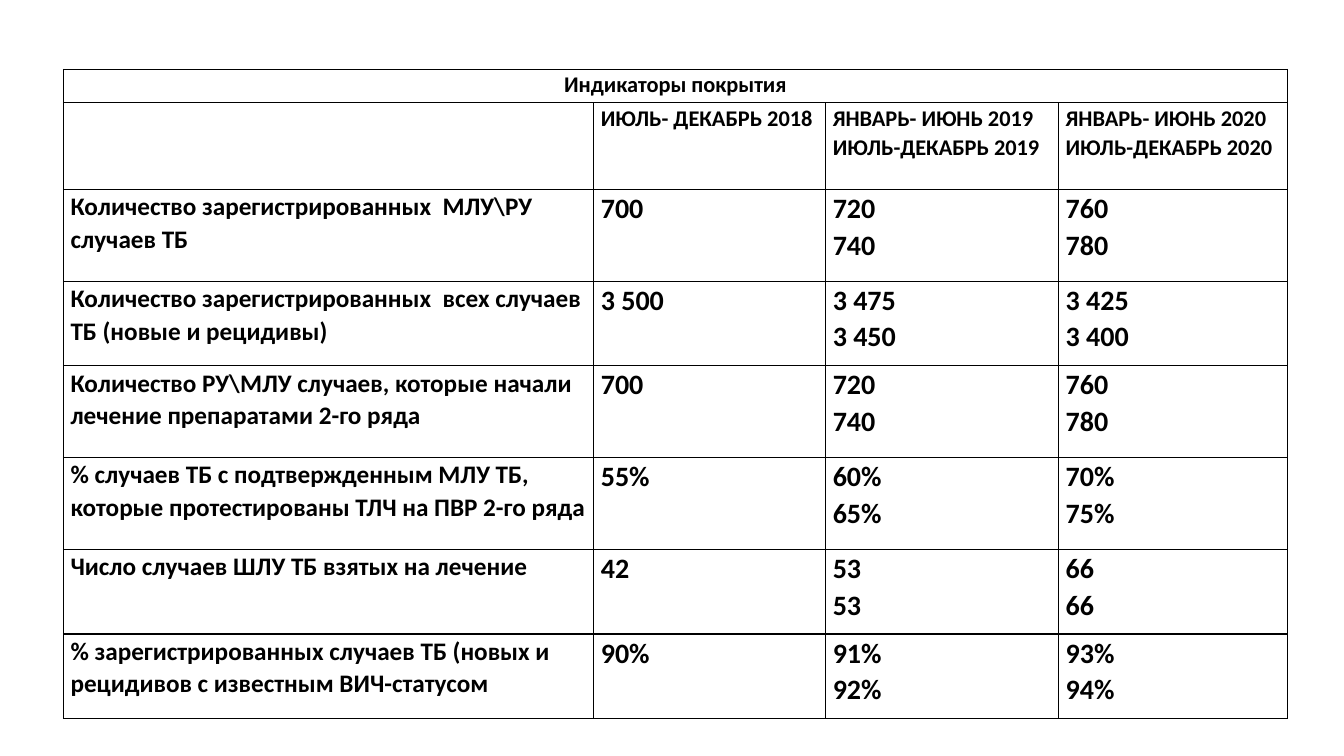
from dataclasses import dataclass

from lxml.etree import SubElement
from pptx import Presentation
from pptx.dml.color import RGBColor
from pptx.enum.text import PP_ALIGN
from pptx.oxml.ns import qn
from pptx.table import Table, _Cell
from pptx.util import Emu, Pt

EMU_PER_PX = 9144


def px(length: int) -> Emu:
    return Emu(length * EMU_PER_PX)


@dataclass(frozen=True)
class Theme:
    font: str = "Calibri"
    ink: str = "000000"
    header_size: int = 16
    label_size: int = 18
    value_size: int = 20
    border_width: int = 1
    line_spacing: float = 1.07


@dataclass(frozen=True)
class Indicator:
    label: str
    second_half_2018: str
    halves_2019: str
    halves_2020: str


THEME = Theme()
SLIDE_WIDTH, SLIDE_HEIGHT = 1333, 750
TABLE_LEFT, TABLE_TOP = 63, 69
COLUMN_WIDTHS = (526, 230, 231, 227)
ROW_HEIGHTS = (33, 86, 91, 84, 91, 91, 84, 84)
SIDE_MARGIN = 7

TITLE = "Индикаторы покрытия"
PERIODS = (
    "ИЮЛЬ- ДЕКАБРЬ 2018",
    "ЯНВАРЬ- ИЮНЬ 2019\nИЮЛЬ-ДЕКАБРЬ 2019",
    "ЯНВАРЬ- ИЮНЬ 2020\nИЮЛЬ-ДЕКАБРЬ 2020",
)
INDICATORS = (
    Indicator(r"Количество зарегистрированных  МЛУ\РУ случаев ТБ",
              "700", "720\n740", "760\n780"),
    Indicator("Количество зарегистрированных  всех случаев ТБ (новые и рецидивы)",
              "3 500", "3 475\n3 450", "3 425\n3 400"),
    Indicator(r"Количество РУ\МЛУ случаев, которые начали лечение препаратами 2-го ряда",
              "700", "720\n740", "760\n780"),
    Indicator("% случаев ТБ с подтвержденным МЛУ ТБ, которые протестированы ТЛЧ на ПВР 2-го ряда",
              "55%", "60%\n65%", "70%\n75%"),
    Indicator("Число случаев ШЛУ ТБ взятых на лечение",
              "42", "53\n53", "66\n66"),
    Indicator("% зарегистрированных случаев ТБ (новых и рецидивов с известным ВИЧ-статусом",
              "90%", "91%\n92%", "93%\n94%"),
)


def style_cell(cell: _Cell) -> None:
    properties = cell._tc.get_or_add_tcPr()
    for side in ("lnL", "lnR", "lnT", "lnB"):
        border = SubElement(properties, qn(f"a:{side}"), w=str(Pt(THEME.border_width)))
        fill = SubElement(border, qn("a:solidFill"))
        SubElement(fill, qn("a:srgbClr"), val=THEME.ink)
    cell.fill.background()
    cell.margin_left = cell.margin_right = px(SIDE_MARGIN)
    cell.margin_top = cell.margin_bottom = 0


def write_cell(cell: _Cell, text: str, size: int,
               alignment: PP_ALIGN = PP_ALIGN.LEFT) -> None:
    cell.text_frame.text = text
    for para in cell.text_frame.paragraphs:
        para.alignment = alignment
        para.line_spacing = THEME.line_spacing
        for span in para.runs:
            span.font.name = THEME.font
            span.font.size = Pt(size)
            span.font.bold = True
            span.font.color.rgb = RGBColor.from_string(THEME.ink)


def fill_table(table: Table) -> None:
    write_cell(table.cell(0, 0), TITLE, THEME.header_size, PP_ALIGN.CENTER)
    for column, period in enumerate(PERIODS, start=1):
        write_cell(table.cell(1, column), period, THEME.header_size)
    for row, indicator in enumerate(INDICATORS, start=2):
        write_cell(table.cell(row, 0), indicator.label, THEME.label_size)
        values = (indicator.second_half_2018, indicator.halves_2019, indicator.halves_2020)
        for column, value in enumerate(values, start=1):
            write_cell(table.cell(row, column), value, THEME.value_size)


def main() -> None:
    deck = Presentation()
    deck.slide_width, deck.slide_height = px(SLIDE_WIDTH), px(SLIDE_HEIGHT)
    page = deck.slides.add_slide(deck.slide_layouts.get_by_name("Blank"))
    table = page.shapes.add_table(
        len(ROW_HEIGHTS), len(COLUMN_WIDTHS), px(TABLE_LEFT), px(TABLE_TOP),
        px(sum(COLUMN_WIDTHS)), px(sum(ROW_HEIGHTS)),
    ).table
    table.first_row = table.horz_banding = False
    for column, width in zip(table.columns, COLUMN_WIDTHS):
        column.width = px(width)
    for row, height in zip(table.rows, ROW_HEIGHTS):
        row.height = px(height)
    for cell in table.iter_cells():
        style_cell(cell)
    table.cell(0, 0).merge(table.cell(0, len(COLUMN_WIDTHS) - 1))
    fill_table(table)
    deck.save("out.pptx")


if __name__ == "__main__":
    main()
